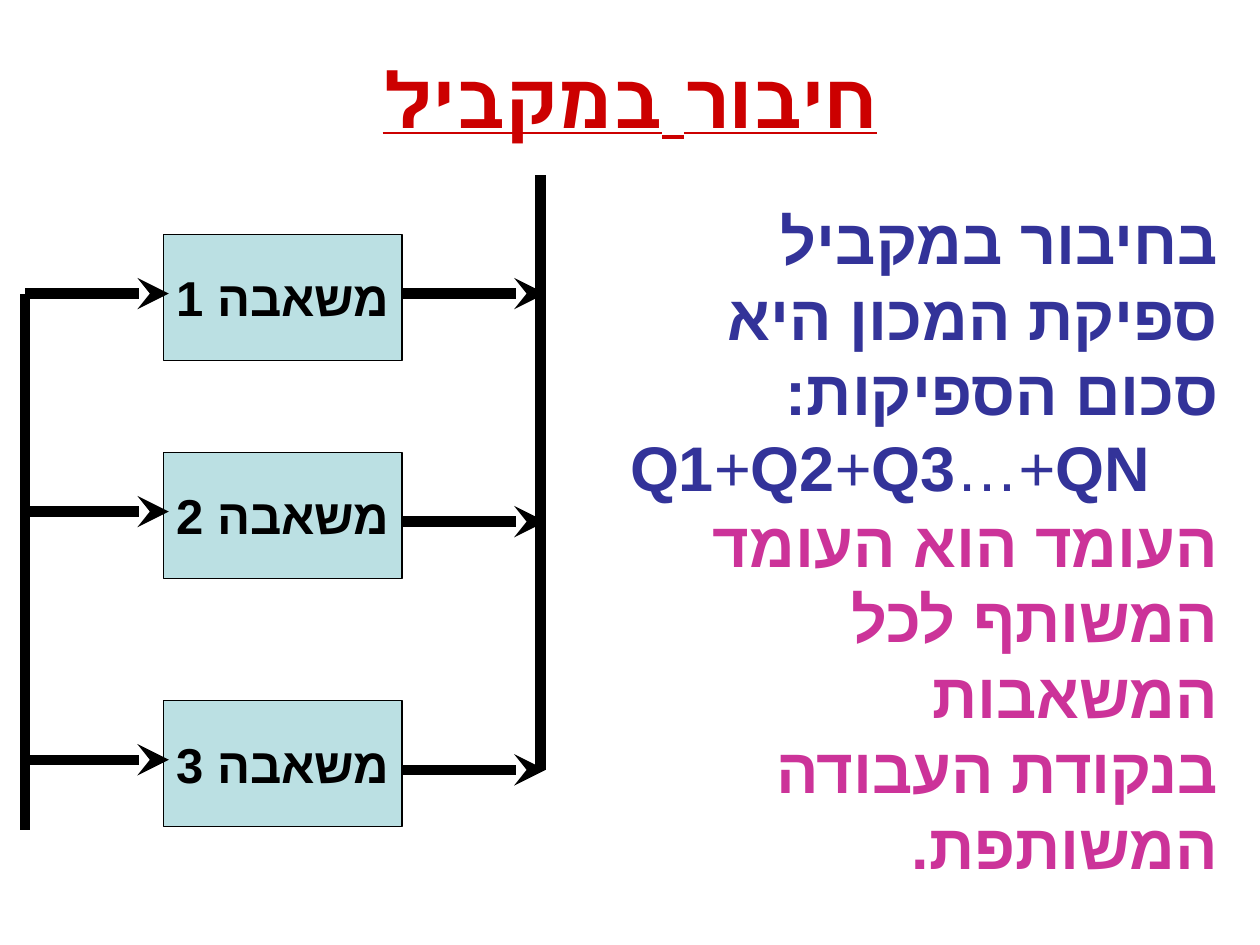
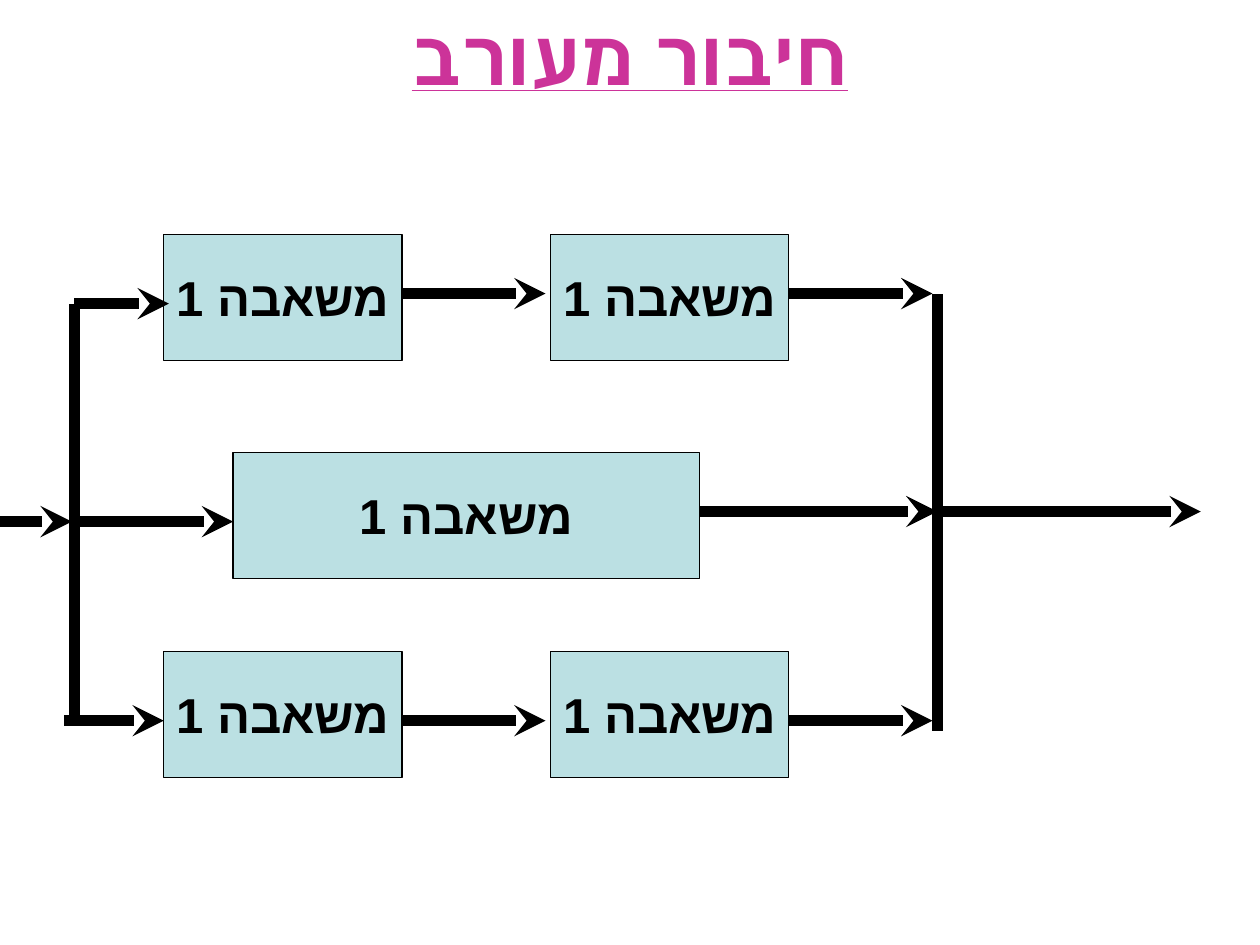
from lxml import etree
from pptx import Presentation
from pptx.dml.color import RGBColor
from pptx.enum.shapes import MSO_CONNECTOR, MSO_SHAPE
from pptx.enum.text import MSO_ANCHOR, MSO_AUTO_SIZE, PP_ALIGN
from pptx.oxml.ns import qn
from pptx.util import Pt

PX = 9144  # 100 px to the inch
RECT, LINE = MSO_SHAPE.RECTANGLE, MSO_CONNECTOR.STRAIGHT
TOP, MIDDLE = MSO_ANCHOR.TOP, MSO_ANCHOR.MIDDLE
LEFT, CENTER, RIGHT = PP_ALIGN.LEFT, PP_ALIGN.CENTER, PP_ALIGN.RIGHT
FIXED = MSO_AUTO_SIZE.NONE
BLACK, RED, PINK, NAVY, AQUA = "000000", "CC0000", "CC3399", "333399", "BBE0E3"


def color(code):
    return RGBColor.from_string(code)


def write(para, runs, size, code, align, rtl=True):
    """Fill a paragraph with (text, font, bold) runs."""
    props = para._p.get_or_add_pPr()
    props.set("rtl", "1" if rtl else "0")
    props.set("marL", "0" if rtl else str(29 * PX))
    props.set("indent", "0")
    para.alignment = align
    para.space_before = Pt(0)
    etree.SubElement(props, qn("a:buNone"))
    for text, face, bold in runs:
        run = para.add_run()
        run.text = text
        font = run.font
        font.name, font.size, font.bold = face, Pt(size), bold
        font.color.rgb = color(code)
        script = etree.SubElement(run._r.get_or_add_rPr(), qn("a:cs"))
        script.set("typeface", face)


# Slide content: boxes (x, y, width, number), lines (x1, y1, x2, y2, arrow)
pages = [
    dict(
        layout=1, top=36, hue=RED,
        title=[("חיבור", "Karla", True), (" ", "Arial", True),
               ("במקביל", "Karla", True)],
        boxes=[(130, 186, 189, 1), (130, 359, 189, 2), (130, 556, 189, 3)],
        lines=[(20, y, 134, y, True) for y in (233, 406, 603)]
        + [(20, 233, 20, 659, False)]
        + [(319, y, 433, y, True) for y in (233, 414, 611)]
        + [(429, 611, 429, 139, False)],
    ),
    dict(
        layout=5, top=2, hue=PINK,
        title=[("חיבור מעורב", "Karla", True)],
        boxes=[(x, y, 189, 1) for y in (186, 517) for x in (130, 437)]
        + [(185, 359, 370, 1)],
        lines=[(x, y, x + 114, y, True) for y in (233, 572) for x in (319, 626)]
        + [(555, 406, 744, 406, True), (59, 414, 185, 414, True),
           (59, 241, 134, 241, True), (51, 572, 130, 572, True),
           (59, 241, 59, 572, False), (744, 580, 744, 233, False),
           (744, 406, 902, 406, False), (0, 414, 57, 414, True),
           (839, 406, 953, 406, True)],
    ),
]

deck = Presentation()
deck.slide_width, deck.slide_height = 1000 * PX, 750 * PX

for page in pages:
    slide = deck.slides.add_slide(deck.slide_layouts[page["layout"]])
    shapes = slide.shapes

    # Title
    head = shapes.title
    head.left, head.top = 0, page["top"] * PX
    head.width, head.height = 1000 * PX, 83 * PX
    frame = head.text_frame
    frame.auto_size, frame.vertical_anchor = FIXED, TOP
    write(frame.paragraphs[0], page["title"], 44, page["hue"], CENTER)
    for run in frame.paragraphs[0].runs:
        run.font.underline = True

    # Pump boxes
    for x, y, width, num in page["boxes"]:
        box = shapes.add_shape(RECT, x * PX, y * PX, width * PX, 100 * PX)
        box.shadow.inherit = False
        box.fill.solid()
        box.fill.fore_color.rgb = color(AQUA)
        box.line.color.rgb = color(BLACK)
        box.line.width = Pt(0.75)
        frame = box.text_frame
        frame.word_wrap, frame.vertical_anchor = False, MIDDLE
        write(frame.paragraphs[0], [(f"משאבה {num}", "Arial", True)],
              28, BLACK, CENTER)

    # Pipes
    for x1, y1, x2, y2, arrow in page["lines"]:
        pipe = shapes.add_connector(LINE, x1 * PX, y1 * PX, x2 * PX, y2 * PX)
        pipe.line.color.rgb = color(BLACK)
        pipe.line.width = Pt(6)
        if arrow:
            tip = etree.SubElement(pipe.line._get_or_add_ln(), qn("a:tailEnd"))
            tip.set("type", "stealth")
        etree.SubElement(pipe._element.spPr, qn("a:effectLst"))

# Explanation on the first slide
body = deck.slides[0].placeholders[1]
body.left, body.top = 461 * PX, 155 * PX
body.width, body.height = 516 * PX, 551 * PX
frame = body.text_frame
frame.auto_size, frame.vertical_anchor = FIXED, TOP
sum_runs = [(text, "Arial", "+" not in text)
            for text in ("Q1", "+", "Q2", "+", "Q3", "…+", "QN")]
texts = [
    ([("בחיבור במקביל ספיקת המכון היא סכום הספיקות:", "Arial", True)], NAVY, True),
    (sum_runs, NAVY, False),
    ([("העומד הוא העומד המשותף לכל המשאבות", "Arial", True)], PINK, True),
    ([("בנקודת העבודה המשותפת.", "Arial", True)], PINK, True),
]
for i, (runs, hue, rtl) in enumerate(texts):
    para = frame.add_paragraph() if i else frame.paragraphs[0]
    write(para, runs, 36, hue, RIGHT if rtl else LEFT, rtl)

deck.save("out.pptx")
